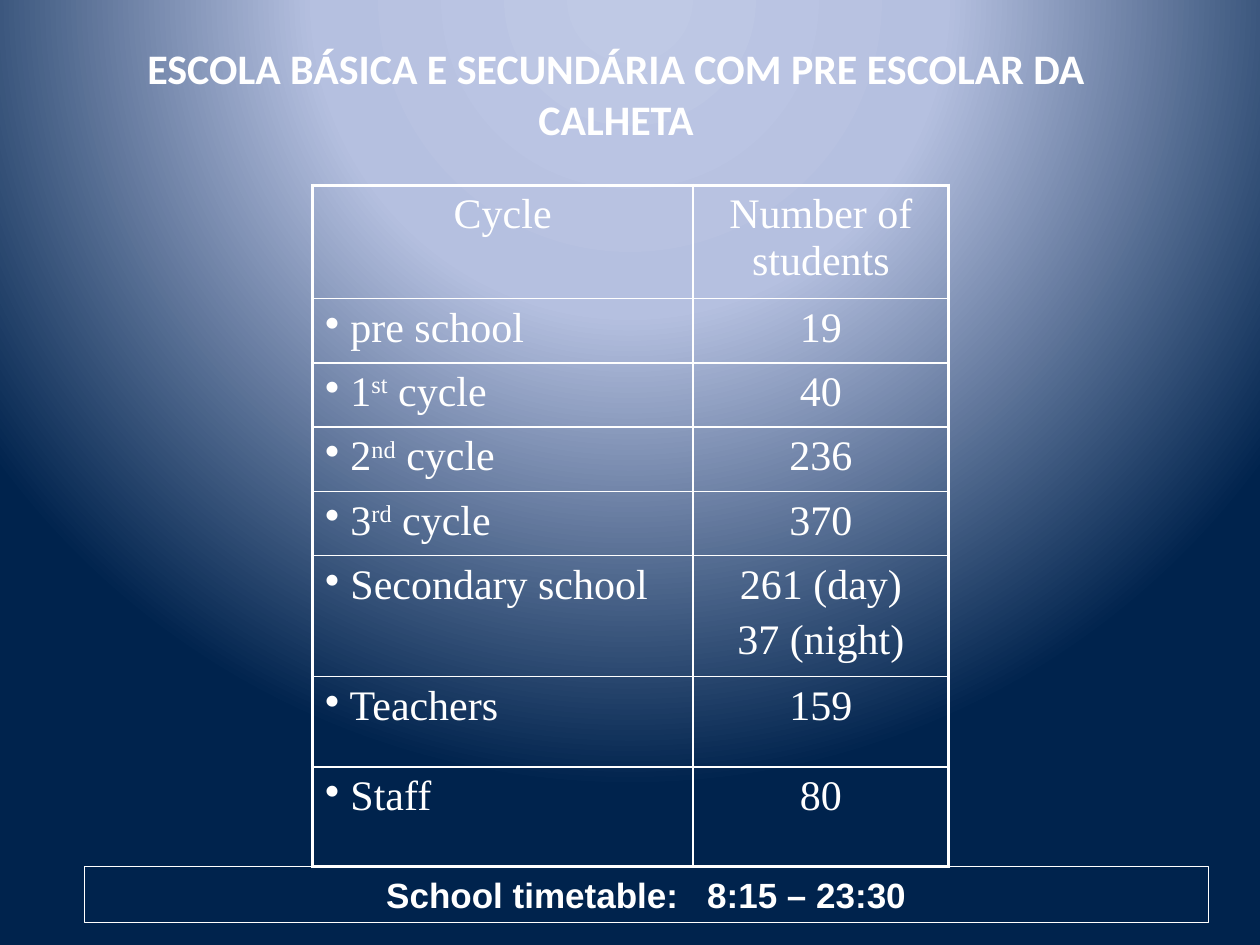
"""Build the school overview slide: title, student numbers and timetable."""
from lxml import etree
from pptx import Presentation
from pptx.dml.color import RGBColor
from pptx.enum.shapes import MSO_SHAPE
from pptx.enum.text import MSO_ANCHOR, MSO_AUTO_SIZE, PP_ALIGN
from pptx.oxml import parse_xml
from pptx.oxml.ns import qn
from pptx.util import Inches, Pt

CENTER, LEFT = PP_ALIGN.CENTER, PP_ALIGN.LEFT
TOP, MIDDLE = MSO_ANCHOR.TOP, MSO_ANCHOR.MIDDLE
RECTANGLE, NO_AUTOFIT = MSO_SHAPE.RECTANGLE, MSO_AUTO_SIZE.NONE

TITLE = "ESCOLA BÁSICA E SECUNDÁRIA COM PRE ESCOLAR DA CALHETA"
TIMETABLE = "School timetable:   8:15 – 23:30"
HEADER = ("Cycle", "Number of students")
ROWS = [
    (("pre school",), ["19"]),
    (("1", "st", " cycle"), ["40"]),
    (("2", "nd", " cycle"), ["236"]),
    (("3", "rd", " cycle"), ["370"]),
    (("Secondary school",), ["261 (day)", "37 (night)"]),
    (("Teachers",), ["159"]),
    (("Staff",), ["80"]),
]
COLUMN_WIDTHS = [3.02, 2.03]
ROW_HEIGHTS = [0.9] + [0.51] * 4 + [0.96, 0.72, 0.79]
TABLE_LEFT, TABLE_TOP = 2.48, 1.47
BAND_WIDTH = 8.92
WHITE = "FFFFFF"
BACKGROUND_STOPS = [(0, "BFC9E5"), (40, "B5C0E0"), (100, "00234D")]
THICK, THIN = 2.25, 1


def color(value):
    return RGBColor.from_string(value)


def paint_background(slide):
    stops = "".join(
        f'<a:gs pos="{position * 1000}"><a:srgbClr val="{value}"/></a:gs>'
        for position, value in BACKGROUND_STOPS
    )
    slide.background.fill.gradient()
    properties = slide.background._cSld.bg.bgPr
    gradient = parse_xml(
        '<a:gradFill xmlns:a="http://schemas.openxmlformats.org/drawingml/2006/main" '
        f'rotWithShape="1"><a:gsLst>{stops}</a:gsLst><a:path path="circle">'
        '<a:fillToRect l="50000" t="-80000" r="50000" b="180000"/></a:path></a:gradFill>'
    )
    properties.replace(properties.find(qn("a:gradFill")), gradient)


def style(paragraph, font_name, size, alignment=CENTER, bold=False, before=0):
    paragraph.alignment = alignment
    paragraph.space_before = Pt(before)
    font = paragraph.font
    font.name, font.size, font.bold = font_name, Pt(size), bold
    font.color.rgb = color(WHITE)


def add_bullet(paragraph):
    properties = paragraph._p.get_or_add_pPr()
    bullet = etree.Element(qn("a:buChar"), char="•")
    defaults = properties.find(qn("a:defRPr"))
    defaults.addprevious(bullet)


def set_borders(cell, widths):
    properties = cell._tc.get_or_add_tcPr()
    for index, (side, width) in enumerate(widths.items()):
        line = etree.Element(qn(f"a:ln{side}"), w=str(int(Pt(width))))
        fill = etree.SubElement(line, qn("a:solidFill"))
        etree.SubElement(fill, qn("a:srgbClr"), val=WHITE)
        properties.insert(index, line)


def write_cell(cell, paragraphs, bulleted=False):
    frame = cell.text_frame
    for index, parts in enumerate(paragraphs):
        paragraph = frame.paragraphs[0] if index == 0 else frame.add_paragraph()
        for position, text in enumerate(parts):
            run = paragraph.add_run()
            run.text = f" {text}" if bulleted and position == 0 else text
            if position == 1:
                run.font._element.set("baseline", "30000")
        style(paragraph, "Times New Roman", 24, LEFT if bulleted else CENTER, before=4.8)
        if bulleted:
            add_bullet(paragraph)


def add_student_table(slide):
    row_count, column_count = len(ROW_HEIGHTS), len(COLUMN_WIDTHS)
    table = slide.shapes.add_table(
        row_count, column_count, Inches(TABLE_LEFT), Inches(TABLE_TOP),
        Inches(sum(COLUMN_WIDTHS)), Inches(sum(ROW_HEIGHTS)),
    ).table
    table.first_row = table.horz_banding = False
    for column, width in zip(table.columns, COLUMN_WIDTHS):
        column.width = Inches(width)
    for row, height in zip(table.rows, ROW_HEIGHTS):
        row.height = Inches(height)
    for index, heading in enumerate(HEADER):
        write_cell(table.cell(0, index), [(heading,)])
    for index, (label, values) in enumerate(ROWS, start=1):
        write_cell(table.cell(index, 0), [label], bulleted=True)
        write_cell(table.cell(index, 1), [(value,) for value in values])
    for row in range(row_count):
        for column in range(column_count):
            cell = table.cell(row, column)
            cell.fill.background()
            set_borders(cell, {
                "L": THICK if column == 0 else THIN,
                "R": THICK if column == column_count - 1 else THIN,
                "T": THICK if row == 0 else THIN,
                "B": THICK if row == row_count - 1 else THIN,
            })


def add_title(slide):
    title = slide.shapes.title
    title.left, title.top = Inches(0.43), Inches(0.29)
    title.width, title.height = Inches(BAND_WIDTH), Inches(0.57)
    frame = title.text_frame
    frame.text = TITLE
    frame.word_wrap, frame.auto_size = True, NO_AUTOFIT
    frame.vertical_anchor = TOP
    style(frame.paragraphs[0], "Calibri", 24, bold=True)


def add_timetable(slide):
    box = slide.shapes.add_shape(
        RECTANGLE, Inches(0.67), Inches(TABLE_TOP + sum(ROW_HEIGHTS)),
        Inches(BAND_WIDTH), Inches(0.44),
    )
    box.shadow.inherit = False
    box.fill.background()
    box.line.color.rgb = color(WHITE)
    box.line.width = Pt(0.75)
    frame = box.text_frame
    frame.text = TIMETABLE
    frame.word_wrap = True
    frame.vertical_anchor = MIDDLE
    style(frame.paragraphs[0], "Arial", 20, bold=True)


def main():
    presentation = Presentation()
    presentation.slide_width, presentation.slide_height = Inches(10), Inches(7.5)
    slide = presentation.slides.add_slide(presentation.slide_layouts[5])
    paint_background(slide)
    add_title(slide)
    add_student_table(slide)
    add_timetable(slide)
    presentation.save("out.pptx")


if __name__ == "__main__":
    main()
